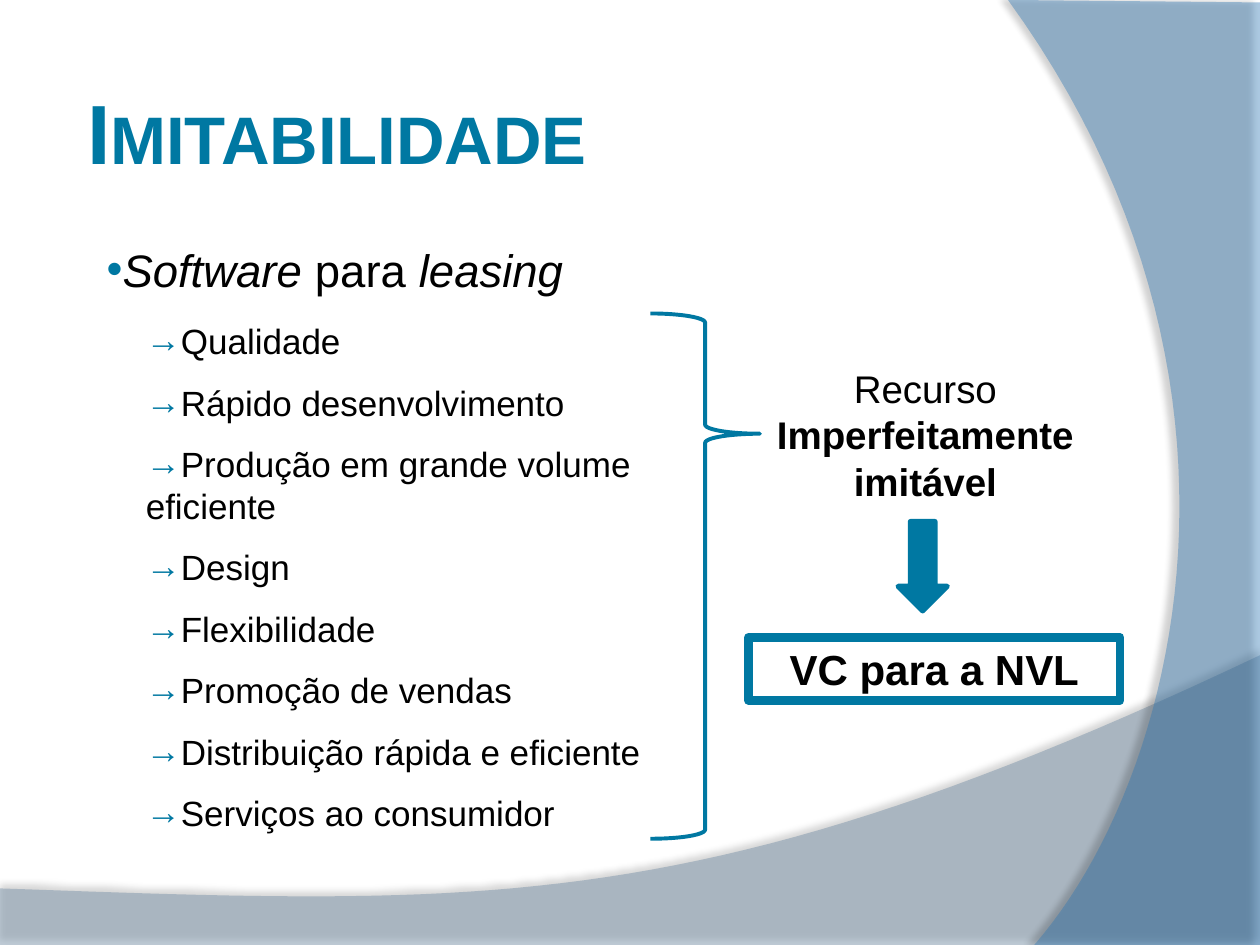
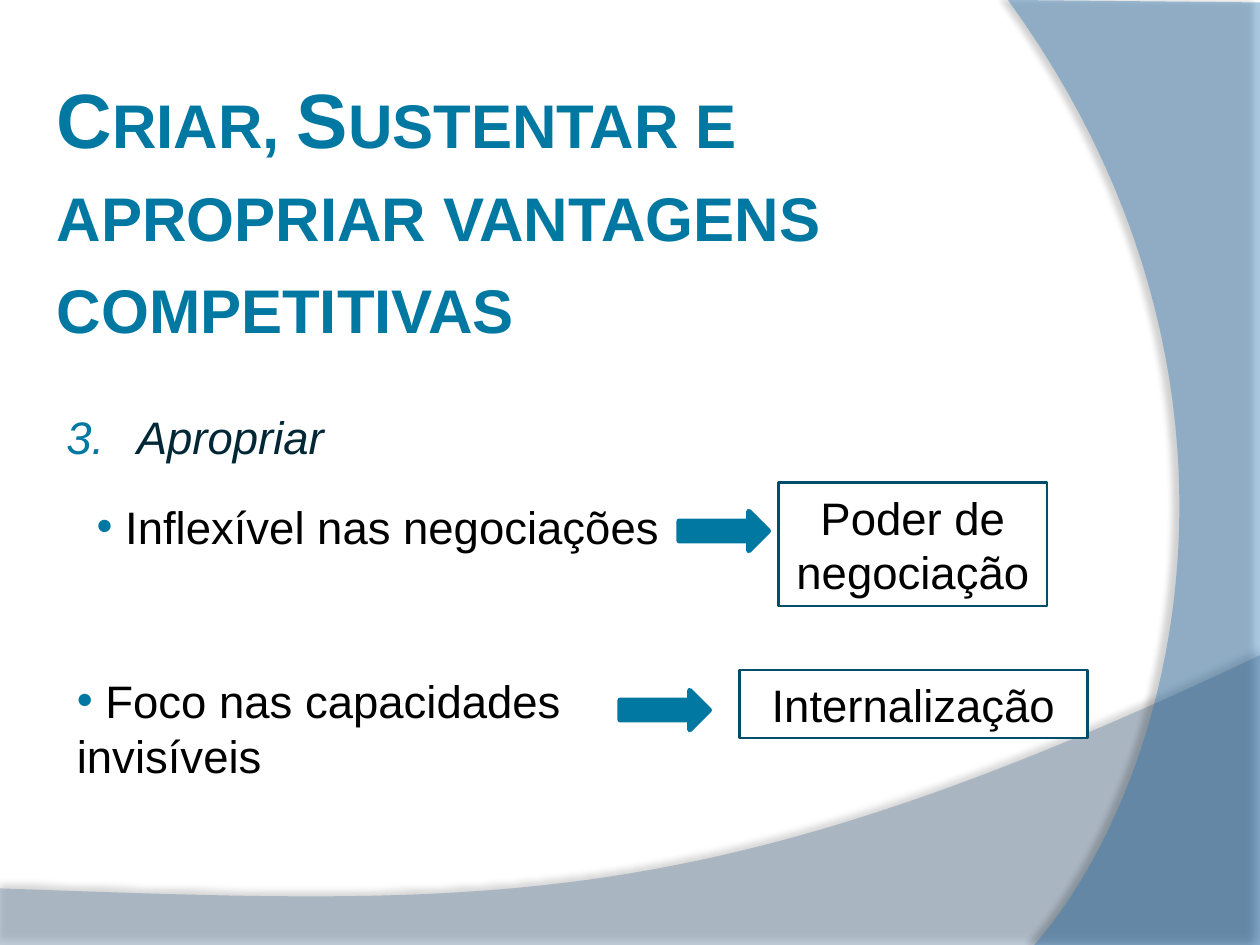
from lxml import etree
from pptx import Presentation
from pptx.dml.color import RGBColor
from pptx.enum.shapes import MSO_SHAPE
from pptx.enum.text import MSO_ANCHOR, MSO_AUTO_SIZE, PP_ALIGN
from pptx.oxml.ns import qn
from pptx.util import Cm, Pt

RECT, ARROW, BRACE = MSO_SHAPE.RECTANGLE, MSO_SHAPE.RIGHT_ARROW, MSO_SHAPE.RIGHT_BRACE
LEFT, CENTER = PP_ALIGN.LEFT, PP_ALIGN.CENTER
TOP, MIDDLE = MSO_ANCHOR.TOP, MSO_ANCHOR.MIDDLE
NO_FIT = MSO_AUTO_SIZE.NONE

FONT = "Arial"
BLUE, NAVY, INK = "0078A2", "004E6A", "002735"
BLACK, WHITE = "000000", "FFFFFF"
STEPS = 48
ROW, EXTRA = 1.24, 0.84

LOW_WAVE = dict(corners=[(0, 19.05), (25.4, 19.05)],
                curve=[(25.4, 13.21), (14.2, 18.52), (9.93, 18.26), (0, 17.91)],
                color="728DA5", alpha=45, dark=35, dist=3.5, angle=270)
SIDE_WAVE = dict(corners=[(25.4, 0.05), (25.4, 19.05)],
                 curve=[(20.85, 19.05), (23.75, 15.72), (25.86, 7.62), (20.32, 0)],
                 color="2E77B4", alpha=40, dark=45, dist=4, angle=180)

TRAITS = ["Qualidade", "Rápido desenvolvimento", "Produção em grande volume eficiente",
          "Design", "Flexibilidade", "Promoção de vendas",
          "Distribuição rápida e eficiente", "Serviços ao consumidor"]
LONG = TRAITS[2]


def rgb(color):
    """Turn a hex string into a colour."""
    return RGBColor.from_string(color)


def node(parent, tag, **attrs):
    """Append a DrawingML element."""
    child = etree.SubElement(parent, qn("a:" + tag))
    for name, value in attrs.items():
        child.set(name, str(value))
    return child


def place(shape, box):
    """Set left, top, width and height from centimetres."""
    shape.left, shape.top, shape.width, shape.height = map(Cm, box)


def mark(para, bullet, start=None, hang=0):
    """Give a paragraph a bullet sign or a number."""
    props = para._p.get_or_add_pPr()
    props.set("marL", str(Cm(hang)))
    props.set("indent", str(-Cm(hang)))
    node(node(props, "buClr"), "srgbClr", val=BLUE)
    node(props, "buFont", typeface=FONT)
    if start:
        node(props, "buAutoNum", type="arabicPeriod", startAt=start)
    else:
        node(props, "buChar", char=bullet)


def write(shape, text, size=26, color=BLACK, style="", align=LEFT, anchor=TOP,
          caps=False, bullet=None, start=None, hang=0):
    """Fill a shape with text, or with (text, style) runs."""
    frame = shape.text_frame
    frame.word_wrap = True
    frame.auto_size = NO_FIT
    frame.vertical_anchor = anchor
    para = frame.paragraphs[0]
    para.alignment = align
    para.line_spacing = Pt(1.2 * size)
    if bullet or start:
        mark(para, bullet, start, hang)
    for words, look in [(text, style)] if isinstance(text, str) else text:
        run = para.add_run()
        run.text = words
        font = run.font
        font.name, font.size = FONT, Pt(size)
        font.color.rgb = rgb(color)
        font.bold, font.italic = "b" in look, "i" in look
        if caps:
            run._r.get_or_add_rPr().set("cap", "small")


def label(slide, box, text, **look):
    """Add a text box."""
    write(slide.shapes.add_textbox(*map(Cm, box)), text, **look)


def draw(slide, kind, box, fill=None, line=BLUE, width=3):
    """Add a preset shape."""
    shape = slide.shapes.add_shape(kind, *map(Cm, box))
    shape.shadow.inherit = False
    if fill:
        shape.fill.solid()
        shape.fill.fore_color.rgb = rgb(fill)
    else:
        shape.fill.background()
    shape.line.color.rgb = rgb(line)
    shape.line.width = Pt(width)
    return shape


def frame(slide, box, text, fill=WHITE, line=NAVY, width=1.5, **look):
    """Add a framed box with centred text."""
    shape = draw(slide, RECT, box, fill, line, width)
    write(shape, text, align=CENTER, anchor=MIDDLE, **look)


def title(slide, box, text, size):
    """Place and format the slide title."""
    place(slide.shapes.title, box)
    write(slide.shapes.title, text, size=size, color=BLUE, style="b", caps=True)


def bend(points):
    """Sample a cubic curve."""
    for step in range(STEPS + 1):
        t = step / STEPS
        parts = ((1 - t) ** 3, 3 * t * (1 - t) ** 2, 3 * t * t * (1 - t), t ** 3)
        yield tuple(Cm(sum(p * point[axis] for p, point in zip(parts, points)))
                    for axis in (0, 1))


def wave(slide, corners, curve, color, alpha, dark, dist, angle):
    """Draw a translucent wave with a soft shadow."""
    first, *rest = [(Cm(x), Cm(y)) for x, y in corners]
    pen = slide.shapes.build_freeform(*first)
    pen.add_line_segments(rest + list(bend(curve)), close=True)
    shape = pen.convert_to_shape()
    shape.fill.solid()
    shape.fill.fore_color.rgb = rgb(color)
    shape.line.fill.background()
    shape.shadow.inherit = False
    props = shape._element.spPr
    node(props.find(".//" + qn("a:srgbClr")), "alpha", val=alpha * 1000)
    cast = node(props.find(qn("a:effectLst")), "outerShdw", blurRad=Pt(4),
                dist=Pt(dist), dir=angle * 60000, rotWithShape=0)
    node(node(cast, "srgbClr", val=BLACK), "alpha", val=dark * 1000)
    return shape


def share(slide, layout):
    """Move the waves to the layout, behind everything."""
    for spot, look in enumerate((LOW_WAVE, SIDE_WAVE)):
        item = wave(slide, **look)._element
        item.nvSpPr.cNvPr.set("id", str(50 + spot))
        layout.shapes._spTree.insert(2 + spot, item)


def imitate(slide):
    """Build the slide on imitability."""
    title(slide, (1.5, 1.5, 17.4, 2.31), "Imitabilidade", 48)
    label(slide, (1.9, 4.75, 9.8, 1.37),
          [("Software", "i"), (" para ", ""), ("leasing", "i")], bullet="•")
    top = 6.32
    for trait in TRAITS:
        more = EXTRA if trait == LONG else 0
        label(slide, (2.69, top, 11.81, 1.12 + more), trait, size=20, bullet="→")
        top += ROW + more
    brace = draw(slide, BRACE, (13.11, 6.32, 2.21, 10.59), width=2.25)
    brace.adjustments[0], brace.adjustments[1] = 0.083, 0.229
    label(slide, (14.91, 7.24, 7.49, 3.07),
          [("Recurso ", ""), ("Imperfeitamente imitável", "b")], size=22, align=CENTER)
    draw(slide, ARROW, (17.7, 10.92, 1.8, 0.99), fill=BLUE).rotation = 90
    frame(slide, (15.09, 12.85, 7.49, 1.27), "VC para a NVL",
          fill=None, line=BLUE, width=5, size=24, style="b")


def keep(slide):
    """Build the slide on appropriating advantages."""
    title(slide, (0.89, 1.32, 19.81, 5.89),
          "Criar, Sustentar e apropriar vantagens competitivas", 44)
    label(slide, (1.09, 8.13, 19, 1.37), "Apropriar", color=INK, style="i",
          start=3, hang=1.42)
    frame(slide, (14.91, 13.51, 7.01, 1.37), "Internalização")
    frame(slide, (15.7, 9.73, 5.41, 2.49), "Poder de negociação")
    label(slide, (1.7, 9.93, 15.39, 1.37), " Inflexível nas negociações", bullet="•")
    label(slide, (1.3, 13.44, 12.6, 3.58), " Foco nas capacidades invisíveis", bullet="•")
    for left, top in ((12.5, 13.92), (13.69, 10.31)):
        draw(slide, ARROW, (left, top, 1.8, 0.79), fill=BLUE)


def main():
    """Build and save the deck."""
    deck = Presentation()
    deck.slide_width, deck.slide_height = Cm(25.4), Cm(19.05)
    layout = deck.slide_layouts[5]
    first, second = (deck.slides.add_slide(layout) for _ in range(2))
    share(first, layout)
    imitate(first)
    keep(second)
    deck.save("out.pptx")


if __name__ == "__main__":
    main()
